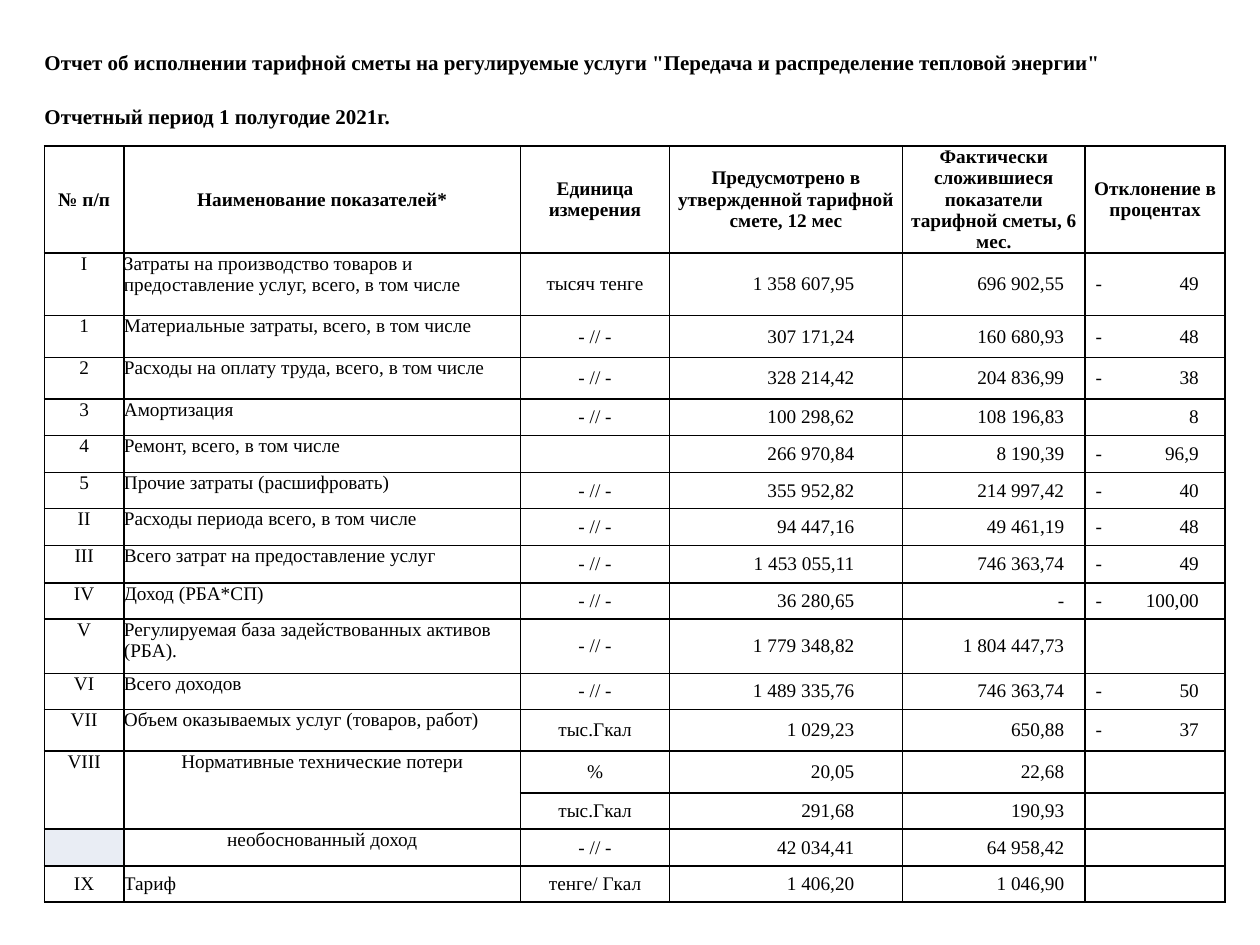
from dataclasses import dataclass, replace

from lxml import etree
from pptx import Presentation
from pptx import util as u
from pptx.dml import color
from pptx.enum import text
from pptx.oxml import ns

FONT = "Times New Roman"
BLACK, WHITE, PALE = "000000", "FFFFFF", "E9EDF4"
SIDES = "LRTB"
COLUMN_WIDTHS = (45.4, 27.4, 199.4, 85, 133.2, 104.4, 80)
TITLE_HEIGHTS = (21, 13, 14, 9.5)
HEADER_HEIGHT = 61
DASH = "- // -"
LEFT, CENTER, RIGHT = text.PP_ALIGN.LEFT, text.PP_ALIGN.CENTER, text.PP_ALIGN.RIGHT
TOP, MIDDLE = text.MSO_ANCHOR.TOP, text.MSO_ANCHOR.MIDDLE


@dataclass(frozen=True)
class Style:
    align: text.PP_ALIGN = CENTER
    anchor: text.MSO_ANCHOR = MIDDLE
    size: float = 11
    bold: bool = False
    left: float = 0
    right: float = 0
    tab: float = 0  # position of a right-aligned tab stop
    borders: str = SIDES
    fill: str = WHITE


@dataclass(frozen=True)
class Indicator:
    height: float
    number: str
    name: str
    unit: str
    planned: str
    actual: str
    deviation: str = ""
    name_align: text.PP_ALIGN = LEFT
    anchor: text.MSO_ANCHOR = TOP


TITLE = Style(align=LEFT, size=12, bold=True, borders="")
HEADER = Style(bold=True)
UNIT = Style()
PLANNED = Style(align=RIGHT, right=27.5)
ACTUAL = Style(align=RIGHT, right=12)
DEVIATION = Style(align=LEFT, left=6, tab=59)

HEADINGS = (
    "№ п/п",
    "Наименование показателей*",
    "Единица измерения",
    "Предусмотрено в утвержденной тарифной смете, 12 мес",
    "Фактически сложившиеся показатели тарифной сметы, 6 мес.",
    "Отклонение в процентах",
)
INDICATORS = (
    Indicator(35.7, "I", "Затраты на производство товаров и предоставление услуг, всего, в том числе",
              "тысяч тенге", "1 358 607,95", "696 902,55", "-\t49"),
    Indicator(24, "1", "Материальные затраты, всего, в том числе", DASH, "307 171,24", "160 680,93", "-\t48"),
    Indicator(23.8, "2", "Расходы на оплату труда, всего, в том числе", DASH, "328 214,42", "204 836,99", "-\t38"),
    Indicator(20.6, "3", "Амортизация", DASH, "100 298,62", "108 196,83", "\t8"),
    Indicator(21.4, "4", "Ремонт, всего, в том числе", "", "266 970,84", "8 190,39", "-\t96,9"),
    Indicator(20.6, "5", "Прочие затраты (расшифровать)", DASH, "355 952,82", "214 997,42", "-\t40"),
    Indicator(21.2, "II", "Расходы периода всего, в том числе", DASH, "94 447,16", "49 461,19", "-\t48"),
    Indicator(21.4, "III", "Всего затрат на предоставление услуг", DASH, "1 453 055,11", "746 363,74", "-\t49"),
    Indicator(20.6, "IV", "Доход (РБА*СП)", DASH, "36 280,65", "-", "-\t100,00"),
    Indicator(31, "V", "Регулируемая база задействованных активов (РБА).", DASH, "1 779 348,82", "1 804 447,73"),
    Indicator(20.6, "VI", "Всего доходов", DASH, "1 489 335,76", "746 363,74", "-\t50"),
    Indicator(23.8, "VII", "Объем оказываемых услуг (товаров, работ)", "тыс.Гкал", "1 029,23", "650,88", "-\t37"),
    Indicator(24, "VIII", "Нормативные технические потери", "%", "20,05", "22,68", name_align=CENTER),
    Indicator(20.6, "", "", "тыс.Гкал", "291,68", "190,93"),
    Indicator(21.2, "", "необоснованный доход", DASH, "42 034,41", "64 958,42", name_align=CENTER),
    Indicator(20.6, "IX", "Тариф", "тенге/ Гкал", "1 406,20", "1 046,90", anchor=MIDDLE),
)


def rgb(value: str) -> color.RGBColor:
    return color.RGBColor.from_string(value)


def set_borders(cell, visible: str) -> None:
    properties = cell._tc.get_or_add_tcPr()
    for side in SIDES:
        line = etree.SubElement(properties, ns.qn(f"a:ln{side}"), w=str(u.Pt(1)))
        if side in visible:
            fill = etree.SubElement(line, ns.qn("a:solidFill"))
            etree.SubElement(fill, ns.qn("a:srgbClr"), val=BLACK)
        else:
            etree.SubElement(line, ns.qn("a:noFill"))


def add_right_tab(paragraph, position: float) -> None:
    tabs = etree.SubElement(paragraph._p.get_or_add_pPr(), ns.qn("a:tabLst"))
    etree.SubElement(tabs, ns.qn("a:tab"), pos=str(u.Pt(position)), algn="r")


def write_cell(cell, words: str, style: Style) -> None:
    set_borders(cell, style.borders)
    cell.fill.solid()
    cell.fill.fore_color.rgb = rgb(style.fill)
    cell.margin_left, cell.margin_right = u.Pt(style.left), u.Pt(style.right)
    cell.margin_top = cell.margin_bottom = u.Pt(0)
    cell.vertical_anchor = style.anchor
    paragraph = cell.text_frame.paragraphs[0]
    paragraph.alignment = style.align
    if not words:
        # A small mark size keeps an empty cell from stretching its row.
        etree.SubElement(paragraph._p, ns.qn("a:endParaRPr"), sz="400")
        return
    if style.tab:
        add_right_tab(paragraph, style.tab)
    run = paragraph.add_run()
    run.text = words
    run.font.name = FONT
    run.font.size = u.Pt(style.size)
    run.font.bold = style.bold
    run.font.color.rgb = rgb(BLACK)


def write_row(table, row: int, words: tuple, styles: tuple) -> None:
    """Write six entries; the second one covers two grid columns."""
    words = (*words[:2], "", *words[2:])
    styles = (*styles[:2], styles[1], *styles[2:])
    for column, (entry, style) in enumerate(zip(words, styles)):
        write_cell(table.cell(row, column), entry, style)


def merge(table, row: int, column: int, last_row: int, last_column: int) -> None:
    table.cell(row, column).merge(table.cell(last_row, last_column))


def write_titles(table) -> None:
    titles = {
        0: 'Отчет об исполнении тарифной сметы на регулируемые услуги "Передача и распределение тепловой энергии"',
        2: "Отчетный период 1 полугодие 2021г.",
    }
    last = len(TITLE_HEIGHTS) - 1
    for row in range(len(TITLE_HEIGHTS)):
        style = replace(TITLE, borders="B") if row == last else TITLE
        write_row(table, row, (titles.get(row, ""), *[""] * 5), (style,) * 6)
    for row, first, final in ((0, 0, 6), (1, 0, 1), (2, 0, 2), (3, 1, 2)):
        merge(table, row, first, row, final)


def write_indicators(table, first_row: int) -> None:
    for row, item in enumerate(INDICATORS, first_row):
        number = Style(anchor=item.anchor, fill=WHITE if item.number else PALE)
        name = Style(align=item.name_align, anchor=item.anchor)
        words = (item.number, item.name, item.unit, item.planned, item.actual, item.deviation)
        write_row(table, row, words, (number, name, UNIT, PLANNED, ACTUAL, DEVIATION))
        if item.number == "VIII":
            merge(table, row, 0, row + 1, 0)
            merge(table, row, 1, row + 1, 2)
        elif item.name:
            merge(table, row, 1, row, 2)


def main() -> None:
    presentation = Presentation()
    presentation.slide_width, presentation.slide_height = u.Pt(720), u.Pt(540)
    slide = presentation.slides.add_slide(presentation.slide_layouts[6])

    heights = (*TITLE_HEIGHTS, HEADER_HEIGHT, *(item.height for item in INDICATORS))
    frame = slide.shapes.add_table(len(heights), len(COLUMN_WIDTHS), u.Pt(25.4), u.Pt(26),
                                   u.Pt(sum(COLUMN_WIDTHS)), u.Pt(sum(heights)))
    table = frame.table
    table.first_row = table.horz_banding = False
    for column, width in zip(table.columns, COLUMN_WIDTHS):
        column.width = u.Pt(width)
    for row, height in zip(table.rows, heights):
        row.height = u.Pt(height)

    header_row = len(TITLE_HEIGHTS)
    write_titles(table)
    write_row(table, header_row, HEADINGS, (HEADER,) * 6)
    merge(table, header_row, 1, header_row, 2)
    write_indicators(table, header_row + 1)
    presentation.save("out.pptx")


if __name__ == "__main__":
    main()
